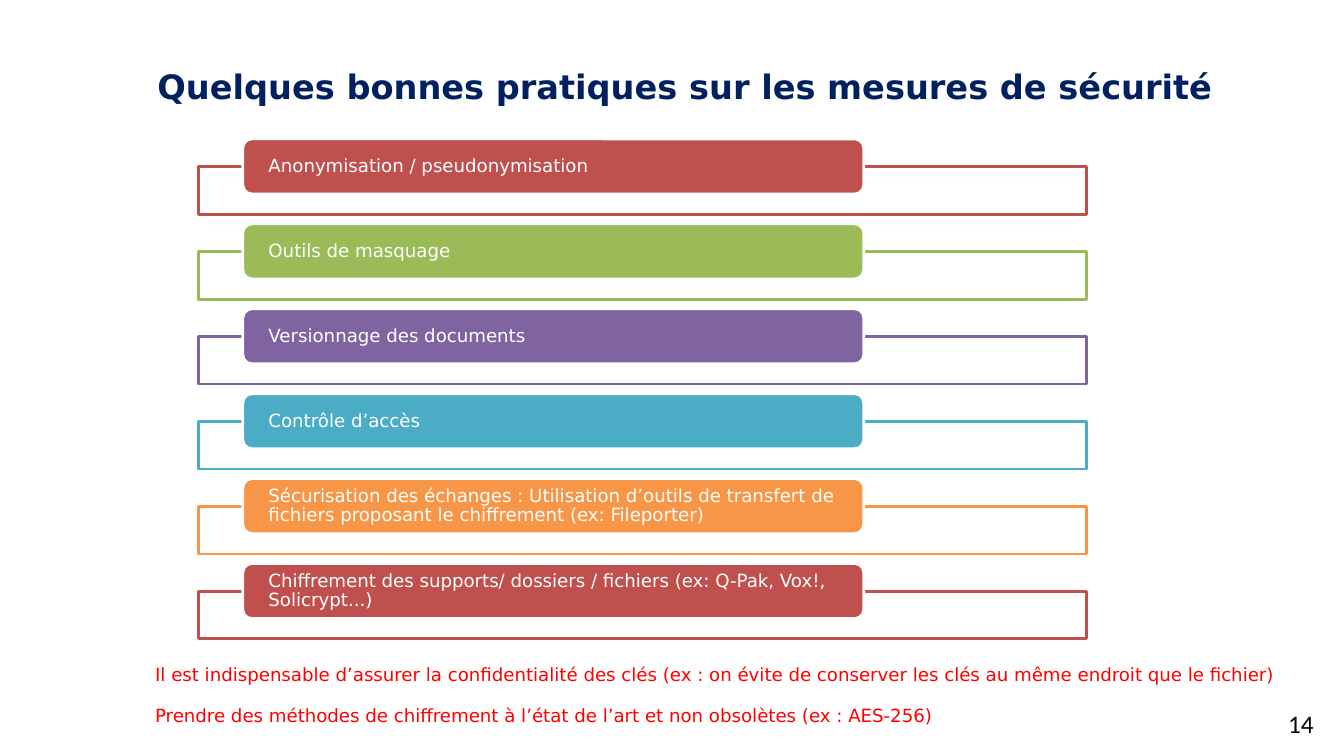
from pptx import Presentation
from pptx.dml.color import RGBColor
from pptx.enum.shapes import MSO_SHAPE
from pptx.enum.text import MSO_ANCHOR, PP_ALIGN
from pptx.util import Cm, Pt


def paint(color_format, color):
    """Give a fill or a font a solid colour from a hex string."""
    if hasattr(color_format, "solid"):
        color_format.solid()
        color_format = color_format.fore_color
    else:
        color_format = color_format.color
    color_format.rgb = RGBColor.from_string(color)


def write(p, text, size, color, name="DejaVu Sans", bold=False, **paragraph_format):
    r = p.add_run()
    r.text = text
    for key, value in {"size": Pt(size), "name": name, "bold": bold}.items():
        setattr(r.font, key, value)
    paint(r.font, color)
    for key, value in paragraph_format.items():
        setattr(p, key, value)


prs = Presentation()
prs.slide_width, prs.slide_height = Cm(33.87), Cm(19.05)
s = prs.slides.add_slide(prs.slide_layouts[6])

# Title
tf = s.shapes.add_textbox(Cm(1.6), Cm(0.58), Cm(31.32), Cm(3.18)).text_frame
tf.word_wrap = True
tf.vertical_anchor = MSO_ANCHOR.MIDDLE
write(tf.paragraphs[0], "Quelques bonnes pratiques sur les mesures de sécurité",
      24, "002060", bold=True, alignment=PP_ALIGN.CENTER)

# Security measures: an outlined frame with a coloured label on its top edge
measures = [
    ("Anonymisation / pseudonymisation", "C0504D"),
    ("Outils de masquage", "9BBB59"),
    ("Versionnage des documents", "8064A2"),
    ("Contrôle d’accès", "4BACC6"),
    ("Sécurisation des échanges : Utilisation d’outils de transfert de "
     "fichiers proposant le chiffrement (ex: Fileporter)", "F79646"),
    ("Chiffrement des supports/ dossiers / fichiers (ex: Q-Pak, Vox!, "
     "Solicrypt...)", "C0504D"),
]
label_format = {"word_wrap": True, "vertical_anchor": MSO_ANCHOR.MIDDLE,
                "margin_left": Cm(0.58), "margin_right": Cm(0.58),
                "margin_top": 0, "margin_bottom": 0}
first_top, pitch = 3.5, 2.14

for i, (text, color) in enumerate(measures):
    top = first_top + i * pitch
    frame = s.shapes.add_shape(MSO_SHAPE.RECTANGLE,
                               Cm(5), Cm(top + 0.7), Cm(22.38), Cm(1.2))
    label = s.shapes.add_shape(MSO_SHAPE.ROUNDED_RECTANGLE,
                               Cm(6.12), Cm(top), Cm(15.65), Cm(1.39))
    for sp, fill, line in ((frame, "FFFFFF", color), (label, color, "FFFFFF")):
        sp.shadow.inherit = False
        paint(sp.fill, fill)
        paint(sp.line.fill, line)
        sp.line.width = Pt(2)
    tf = label.text_frame
    for key, value in label_format.items():
        setattr(tf, key, value)
    write(tf.paragraphs[0], text, 13, "FFFFFF",
          alignment=PP_ALIGN.LEFT, line_spacing=0.9)

# Warnings about keys and methods
warnings = [
    ("Il est indispensable d’assurer la confidentialité des clés (ex : on évite "
     "de conserver les clés au même endroit que le fichier)", 6),
    ("Prendre des méthodes de chiffrement à l’état de l’art et non obsolètes "
     "(ex : AES-256)", 14),
]
tf = s.shapes.add_textbox(Cm(3.66), Cm(16.59), Cm(30), Cm(2.46)).text_frame
tf.word_wrap = True
for i, (text, gap) in enumerate(warnings):
    p = tf.add_paragraph() if i else tf.paragraphs[0]
    write(p, text, 13, "FF0000", space_before=Pt(gap))

# Slide number
tf = s.shapes.add_textbox(Cm(32.21), Cm(17.73), Cm(1.45), Cm(1.02)).text_frame
tf.word_wrap = True
write(tf.paragraphs[0], "14", 18, "000000", name="Calibri")

prs.save("out.pptx")
